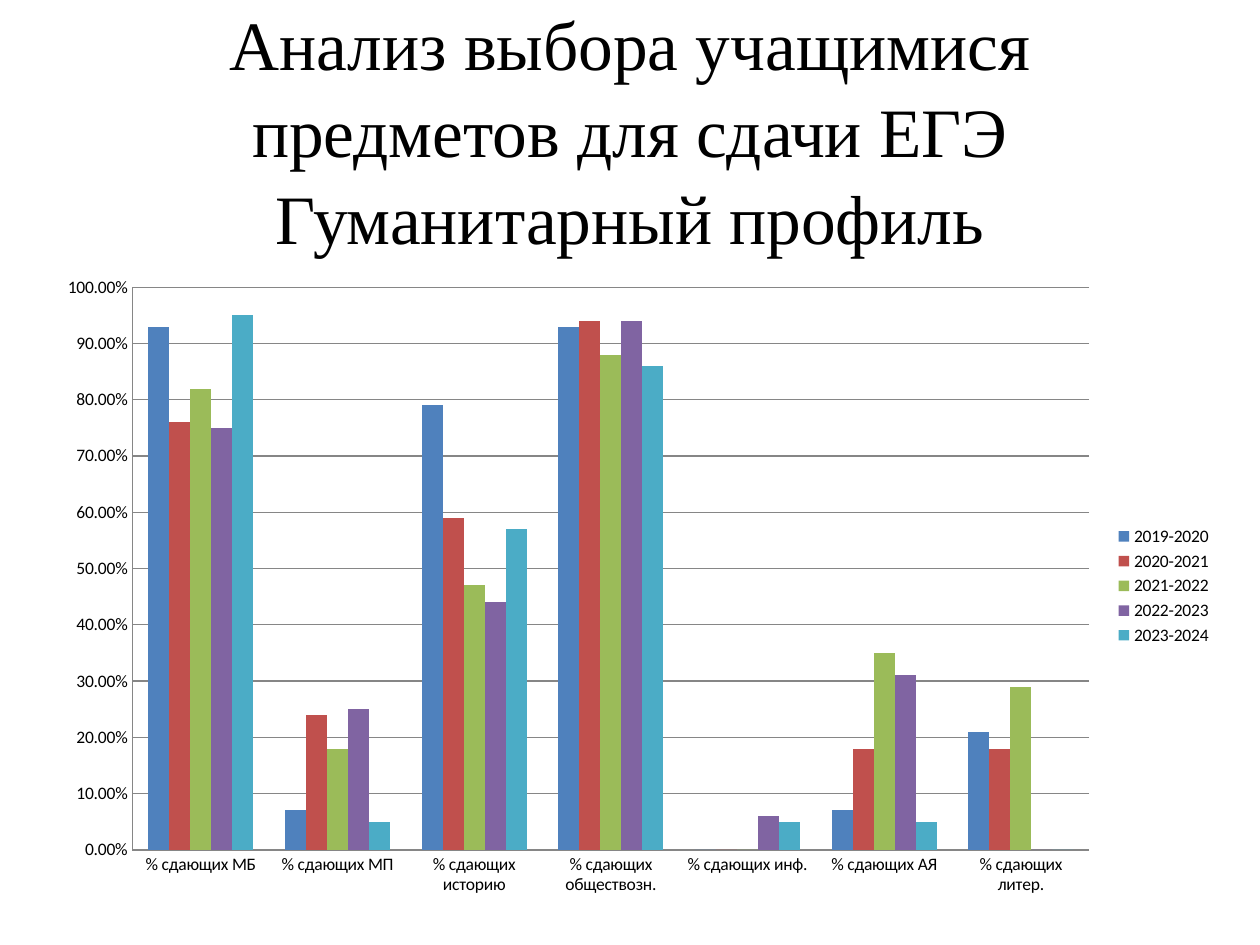
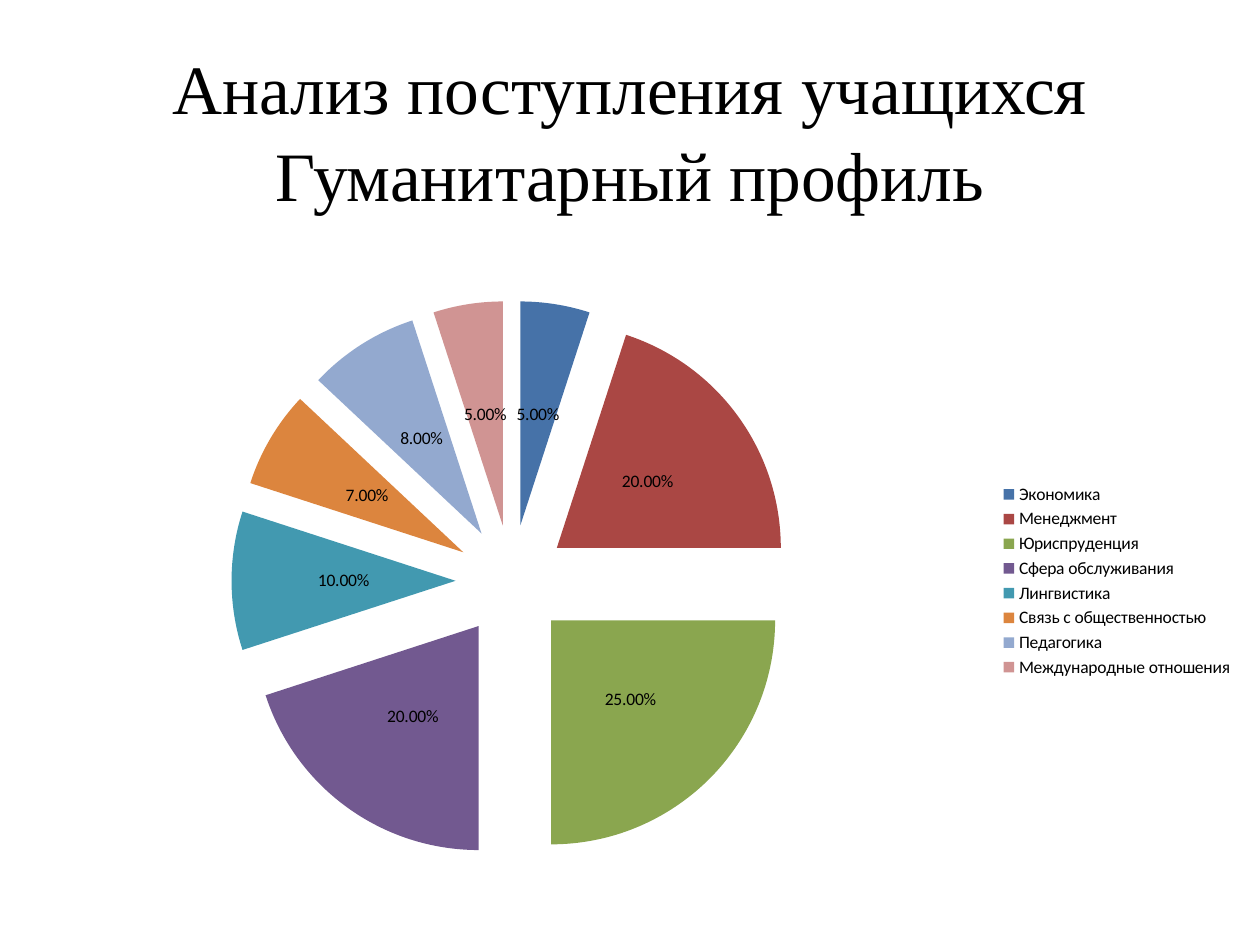
import pptx
import pptx.chart.data
import pptx.dml.color
import pptx.enum.chart
import pptx.enum.text
import pptx.oxml
import pptx.oxml.ns
import pptx.util
from pptx.util import Inches

COLORS = {
    "text": "000000", "rule": "868686",
    "blue": "4F81BD", "red": "C0504D", "green": "9BBB59",
    "purple": "8064A2", "aqua": "4BACC6",
    "deep blue": "4672A8", "deep red": "AA4744", "deep green": "8AA64F",
    "deep purple": "725990", "deep aqua": "4299B0", "orange": "DC853E",
    "pale blue": "93A9CF", "pale red": "D09493",
}
TITLE_FONT = "Times New Roman"
CHART_FONT = "Calibri"
PERCENT = "0.00%"

SUBJECTS = ["% сдающих МБ", "% сдающих МП", "% сдающих историю",
            "% сдающих обществозн.", "% сдающих инф.", "% сдающих АЯ",
            "% сдающих литер."]
EXAM_SHARES = [  # school year, colour, share for each subject
    ("2019-2020", "blue", [0.93, 0.07, 0.79, 0.93, 0, 0.07, 0.21]),
    ("2020-2021", "red", [0.76, 0.24, 0.59, 0.94, 0, 0.18, 0.18]),
    ("2021-2022", "green", [0.82, 0.18, 0.47, 0.88, 0, 0.35, 0.29]),
    ("2022-2023", "purple", [0.75, 0.25, 0.44, 0.94, 0.06, 0.31, 0]),
    ("2023-2024", "aqua", [0.95, 0.05, 0.57, 0.86, 0.05, 0.05, 0]),
]
ADMISSIONS = [  # field of study, share, colour
    ("Экономика", 0.05, "deep blue"),
    ("Менеджмент", 0.2, "deep red"),
    ("Юриспруденция", 0.25, "deep green"),
    ("Сфера обслуживания", 0.2, "deep purple"),
    ("Лингвистика", 0.1, "deep aqua"),
    ("Связь с общественностью", 0.07, "orange"),
    ("Педагогика", 0.08, "pale blue"),
    ("Международные отношения", 0.05, "pale red"),
]


def rgb(name):
    return pptx.dml.color.RGBColor.from_string(COLORS[name])


def style_font(font, face, size):
    font.name = face
    font.size = pptx.util.Pt(size)
    font.color.rgb = rgb("text")


def fill_solid(part, color):
    part.format.fill.solid()
    part.format.fill.fore_color.rgb = rgb(color)


def add_titled_page(deck, title):
    page = deck.slides.add_slide(deck.slide_layouts[5])
    box = page.shapes.title
    box.left, box.top = Inches(0.5), Inches(0.3)
    box.width, box.height = Inches(9), Inches(2.03)
    frame = box.text_frame
    frame.text = title
    frame.auto_size = pptx.enum.text.MSO_AUTO_SIZE.NONE
    frame.vertical_anchor = pptx.enum.text.MSO_ANCHOR.MIDDLE
    frame.margin_bottom = Inches(0.65)  # lifts the title above the chart
    para = frame.paragraphs[0]
    para.alignment = pptx.enum.text.PP_ALIGN.CENTER
    para.line_spacing = 1.05
    style_font(para.font, TITLE_FONT, 39.6)
    return page


def add_chart(page, kind, place, categories, series):
    data = pptx.chart.data.CategoryChartData(number_format=PERCENT)
    data.categories = categories
    for name, values in series:
        data.add_series(name, values)
    frame = page.shapes.add_chart(kind, *map(Inches, place), data)
    chart = frame.chart
    chart.has_title = False
    style_font(chart.font, CHART_FONT, 10)
    chart.has_legend = True
    chart.legend.position = pptx.enum.chart.XL_LEGEND_POSITION.RIGHT
    chart.legend.include_in_layout = False
    return chart


def style_axis(axis):
    axis.major_tick_mark = pptx.enum.chart.XL_TICK_MARK.NONE
    axis.minor_tick_mark = pptx.enum.chart.XL_TICK_MARK.NONE
    style_line(axis.format.line)


def style_line(line):
    line.color.rgb = rgb("rule")
    line.width = pptx.util.Pt(0.75)


def add_exam_columns(page):
    chart = add_chart(page, pptx.enum.chart.XL_CHART_TYPE.COLUMN_CLUSTERED,
                      (0.35, 2.1, 9.37, 5.1), SUBJECTS,
                      [(year, shares) for year, _, shares in EXAM_SHARES])
    plot = chart.plots[0]
    plot.vary_by_categories = False
    plot.gap_width = 150
    for series, (_, color, _) in zip(plot.series, EXAM_SHARES):
        fill_solid(series, color)

    style_axis(chart.category_axis)
    axis = chart.value_axis
    style_axis(axis)
    axis.minimum_scale, axis.maximum_scale, axis.major_unit = 0, 1, 0.1
    axis.tick_labels.number_format = PERCENT
    axis.tick_labels.number_format_is_linked = False
    axis.has_major_gridlines = True
    style_line(axis.major_gridlines.format.line)


def explode(series, percent):
    tag = pptx.oxml.parse_xml(
        f'<c:explosion {pptx.oxml.ns.nsdecls("c")} val="{percent}"/>')
    series._element.find(pptx.oxml.ns.qn("c:tx")).addnext(tag)


def add_admission_pie(page):
    fields, shares, colors = zip(*ADMISSIONS)
    chart = add_chart(page, pptx.enum.chart.XL_CHART_TYPE.PIE,
                      (0.2, 2.25, 9.69, 4.72), fields, [("Series 1", shares)])
    plot = chart.plots[0]
    plot.vary_by_categories = True
    series = plot.series[0]
    explode(series, 25)
    for index, color in enumerate(colors):
        fill_solid(series.points[index], color)

    labels = series.data_labels
    labels.show_value = True
    labels.show_percentage = False
    labels.number_format = PERCENT
    labels.number_format_is_linked = False
    labels.position = pptx.enum.chart.XL_LABEL_POSITION.CENTER
    style_font(labels.font, CHART_FONT, 10)


def main():
    deck = pptx.Presentation()
    deck.slide_width, deck.slide_height = Inches(10), Inches(7.5)

    # Exam choices
    page = add_titled_page(deck, "Анализ выбора учащимися предметов "
                                 "для сдачи ЕГЭ\vГуманитарный профиль")
    add_exam_columns(page)

    # Admissions
    page = add_titled_page(
        deck, "Анализ поступления учащихся Гуманитарный профиль")
    add_admission_pie(page)

    deck.save("out.pptx")


if __name__ == "__main__":
    main()
